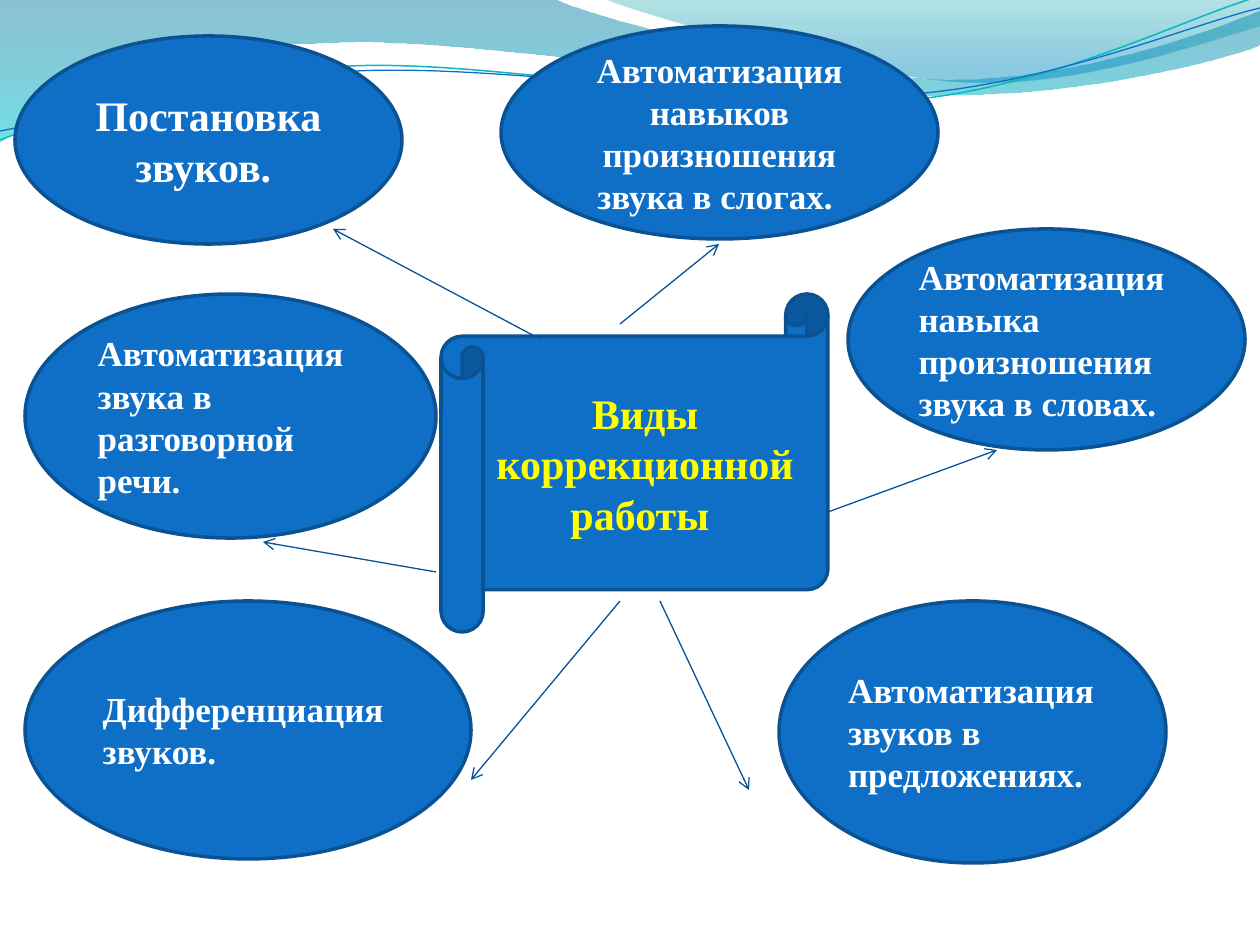
from lxml.etree import SubElement
from pptx import Presentation
from pptx.dml.color import RGBColor
from pptx.enum.shapes import MSO_CONNECTOR, MSO_SHAPE
from pptx.enum.text import MSO_ANCHOR, PP_ALIGN
from pptx.oxml.ns import qn
from pptx.util import Emu, Pt

EMU_PER_PX = 914400 / 126
FONT = "Times New Roman"
BLUE, OUTLINE, ARROW = "0F6FC6", "0B5292", "095295"
WHITE, YELLOW = "FFFFFF", "FFFF00"

# A step of two numbers is a straight line, a step of six a cubic curve.
WAVES = [
    ([(0, 0), (554, -1), (600, 21, 837, 79, 955, 79),
      (1075, 79, 1207, 33, 1260, 11), (1261, 45),
      (1239, 55, 1096, 96, 940, 95), (784, 95, 481, 35, 324, 43),
      (163, 45, 58, 105, -1, 142)],
     [(0, "0074A1", 45), (100, "00C6CF", 55)]),
    ([(604, -1), (641, 15, 859, 78, 969, 82),
      (1079, 87, 1211, 40, 1260, 26), (1260, 0)],
     [(0, "00A1A9", 30), (80, "008BBF", 45)]),
]
WAVE_LINES = [
    ([(0, 140), (60, 117, 199, 72, 349, 66), (498, 59, 747, 112, 898, 101),
      (1049, 89, 1182, 19, 1257, -3)], "0AB8BF", 0.85),
    ([(0, 131), (59, 121, 207, 77, 357, 71), (508, 64, 752, 106, 903, 95),
      (1053, 84, 1186, 26, 1260, 8)], BLUE, 0.75),
]
# The wide gaps before "в" are single em spaces.
WORK_KINDS = [
    ("Постановка звуков. ", (15, 36, 387, 208), 24, PP_ALIGN.CENTER),
    ("Автоматизация навыков произношения звука в слогах. ",
     (501, 26, 437, 213), 20, PP_ALIGN.CENTER),
    ("Автоматизация навыка произношения звука в словах.",
     (848, 229, 397, 221), 20, PP_ALIGN.JUSTIFY),
    ("Автоматизация звуков в предложениях.",
     (779, 601, 387, 262), 20, PP_ALIGN.LEFT),
    ("Дифференциация звуков.", (25, 601, 446, 258), 20, PP_ALIGN.JUSTIFY),
]
TALK_KIND = ("Автоматизация звука в разговорной речи.",
             (25, 294, 411, 244), 20, PP_ALIGN.LEFT)
ARROWS = [
    ((540, 339), (333, 229)),
    ((620, 324), (719, 244)),
    ((828, 512), (997, 450)),
    ((436, 572), (263, 542)),
    ((620, 601), (471, 780)),
    ((660, 601), (749, 790)),
]


def px(length):
    return Emu(round(length * EMU_PER_PX))


def colour(value):
    return RGBColor.from_string(value)


def set_line(line, value, width):
    line.color.rgb = colour(value)
    line.width = Pt(width)


def add_outline(slide, steps, close):
    """Build a freeform from the end points, then bend its curved steps."""
    start, *rest = [(px(step[-2]), px(step[-1])) for step in steps]
    builder = slide.shapes.build_freeform(*start)
    builder.add_line_segments(rest, close=close)
    outline = builder.convert_to_shape()
    outline.shadow.inherit = False
    segments = list(outline.element.iter(qn("a:lnTo")))
    for segment, step in zip(segments, steps[1:]):
        if len(step) == 6:
            segment.tag = qn("a:cubicBezTo")
            for point in list(segment):
                segment.remove(point)
            for x, y in zip(step[::2], step[1::2]):
                SubElement(segment, qn("a:pt"), x=str(px(x) - outline.left),
                           y=str(px(y) - outline.top))
    return outline


def add_wave(slide, steps, stops):
    """Add a borderless wave with a transparent gradient from top to bottom."""
    wave = add_outline(slide, steps, close=True)
    wave.line.fill.background()
    wave.fill.gradient()
    wave.fill.gradient_angle = 270
    stop_list = wave.element.spPr.find(qn("a:gradFill")).find(qn("a:gsLst"))
    for old_stop in list(stop_list):
        stop_list.remove(old_stop)
    for position, value, opacity in stops:
        stop = SubElement(stop_list, qn("a:gs"), pos=str(position * 1000))
        tint = SubElement(stop, qn("a:srgbClr"), val=value)
        SubElement(tint, qn("a:alpha"), val=str(opacity * 1000))


def add_wave_line(slide, steps, value, width):
    curve = add_outline(slide, steps, close=False)
    curve.fill.background()
    set_line(curve.line, value, width)


def add_label(slide, kind, text, place, size, align, text_colour=WHITE):
    box = slide.shapes.add_shape(kind, *map(px, place))
    box.shadow.inherit = False
    box.fill.solid()
    box.fill.fore_color.rgb = colour(BLUE)
    set_line(box.line, OUTLINE, 2)
    frame = box.text_frame
    frame.word_wrap = True
    frame.vertical_anchor = MSO_ANCHOR.MIDDLE
    para = frame.paragraphs[0]
    para.alignment = align
    span = para.add_run()
    span.text = text
    span.font.name = FONT
    span.font.size = Pt(size)
    span.font.bold = True
    span.font.color.rgb = colour(text_colour)


def add_arrow(slide, start, end):
    arrow = slide.shapes.add_connector(
        MSO_CONNECTOR.STRAIGHT, *map(px, start + end))
    set_line(arrow.line, ARROW, 0.75)
    properties = arrow._element.spPr
    SubElement(properties.find(qn("a:ln")), qn("a:tailEnd"), type="arrow")
    SubElement(properties, qn("a:effectLst"))


def main():
    deck = Presentation()
    deck.slide_width, deck.slide_height = px(1260), px(945)
    slide = deck.slides.add_slide(deck.slide_layouts.get_by_name("Blank"))
    for steps, stops in WAVES:
        add_wave(slide, steps, stops)
    for steps, value, width in WAVE_LINES:
        add_wave_line(slide, steps, value, width)
    add_label(slide, MSO_SHAPE.HORIZONTAL_SCROLL, "Виды коррекционной работы ",
              (441, 294, 387, 338), 24, PP_ALIGN.CENTER, YELLOW)
    for work_kind in WORK_KINDS:
        add_label(slide, MSO_SHAPE.OVAL, *work_kind)
    for start, end in ARROWS:
        add_arrow(slide, start, end)
    add_label(slide, MSO_SHAPE.OVAL, *TALK_KIND)
    deck.save("out.pptx")


if __name__ == "__main__":
    main()
